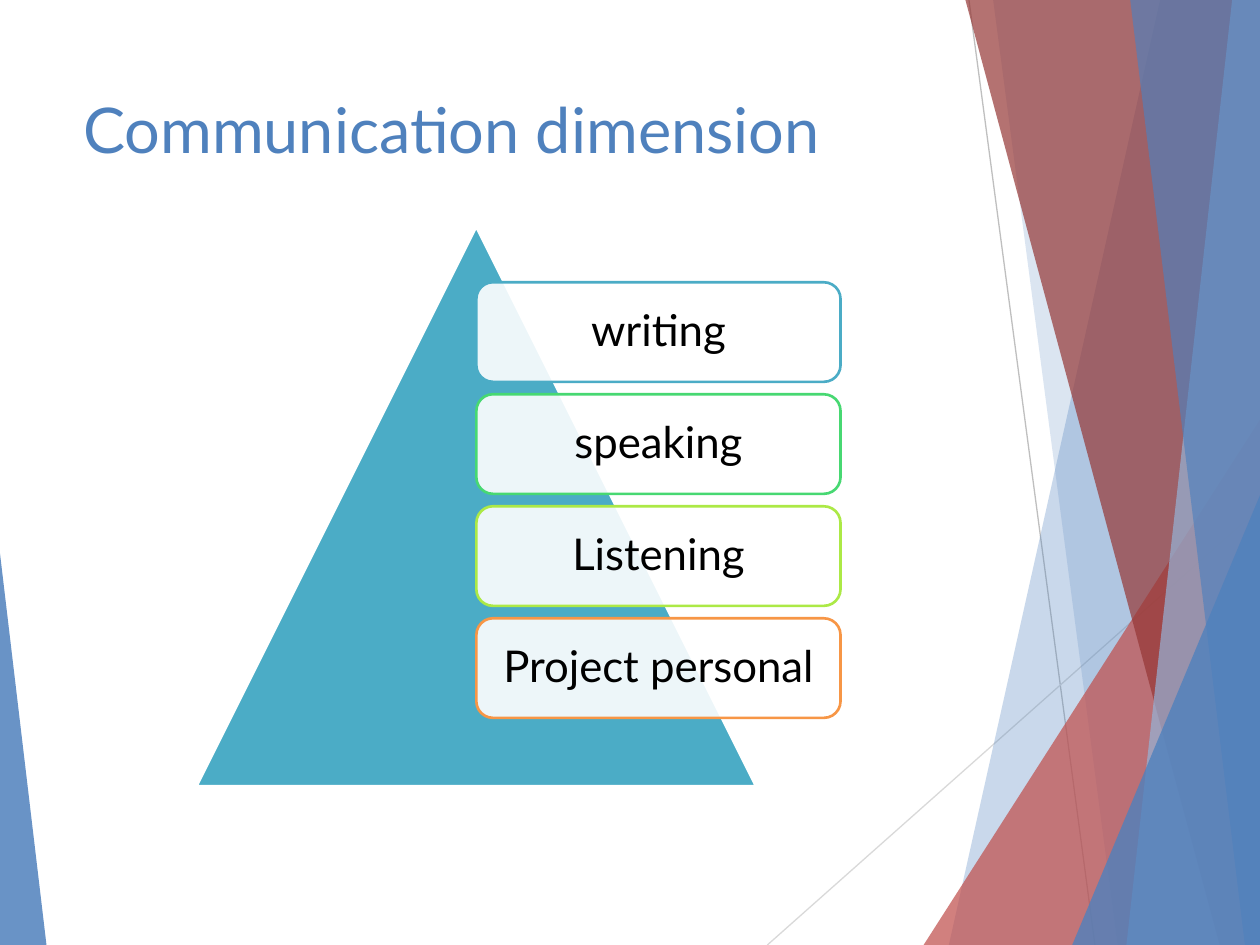
from dataclasses import dataclass

from lxml.etree import SubElement
from pptx import Presentation
from pptx.dml.color import RGBColor
from pptx.enum.shapes import MSO_CONNECTOR, MSO_SHAPE
from pptx.enum.text import MSO_ANCHOR, PP_ALIGN
from pptx.oxml.ns import qn
from pptx.util import Pt

WIDTH, HEIGHT = 720, 540


@dataclass(frozen=True)
class Theme:
    font: str = "Lato"
    title_size: int = 36
    card_size: int = 25
    outline: float = 1.5
    hairline: float = 0.75
    blue: str = "4F81BD"
    pale_blue: str = "95B3D7"
    red: str = "C0504D"
    dark_red: str = "953735"
    teal: str = "4BACC6"
    green: str = "47D872"
    lime: str = "ACE946"
    orange: str = "F79646"
    white: str = "FFFFFF"
    black: str = "000000"
    grey: str = "BFBFBF"
    light_grey: str = "D9D9D9"


class Painter:
    def __init__(self, page, theme):
        self.page = page
        self.theme = theme

    def paint(self, shape, color, opacity=100, outline=None):
        shape.shadow.inherit = False
        shape.fill.solid()
        shape.fill.fore_color.rgb = RGBColor.from_string(color)
        if opacity < 100:
            tint = shape._element.spPr.find(qn("a:solidFill"))[0]
            SubElement(tint, qn("a:alpha")).set("val", str(opacity * 1000))
        if outline:
            shape.line.color.rgb = RGBColor.from_string(outline)
            shape.line.width = Pt(self.theme.outline)
        else:
            shape.line.fill.background()

    def hairline(self, x1, y1, x2, y2, color):
        line = self.page.shapes.add_connector(
            MSO_CONNECTOR.STRAIGHT, Pt(x1), Pt(y1), Pt(x2), Pt(y2))
        line.line.color.rgb = RGBColor.from_string(color)
        line.line.width = Pt(self.theme.hairline)
        SubElement(line._element.spPr, qn("a:effectLst"))

    def band(self, top_x, bottom_x, color, opacity):
        """Fill from a slanted left edge to the right side of the page."""
        top = Pt(-0.72)
        builder = self.page.shapes.build_freeform(Pt(top_x), top)
        builder.add_line_segments([
            (Pt(WIDTH), top), (Pt(WIDTH), Pt(HEIGHT)), (Pt(bottom_x), Pt(HEIGHT))])
        self.paint(builder.convert_to_shape(), color, opacity)

    def triangle(self, left, top, width, height, color, opacity=100, apex=0.5, outline=None):
        shape = self.page.shapes.add_shape(
            MSO_SHAPE.ISOSCELES_TRIANGLE, Pt(left), Pt(top), Pt(width), Pt(height))
        shape.adjustments[0] = apex
        self.paint(shape, color, opacity, outline)

    def label(self, frame, text, size, color, align):
        frame.word_wrap = True
        para = frame.paragraphs[0]
        para.text = text
        para.alignment = align
        para.font.name = self.theme.font
        para.font.size = Pt(size)
        para.font.color.rgb = RGBColor.from_string(color)
        return para

    def title(self, text, left, top, width, height):
        box = self.page.shapes.title
        box.left, box.top, box.width, box.height = Pt(left), Pt(top), Pt(width), Pt(height)
        box.text_frame.vertical_anchor = MSO_ANCHOR.TOP
        self.label(box.text_frame, text, self.theme.title_size, self.theme.blue, PP_ALIGN.LEFT)

    def card(self, text, left, top, width, height, outline):
        box = self.page.shapes.add_shape(
            MSO_SHAPE.ROUNDED_RECTANGLE, Pt(left), Pt(top), Pt(width), Pt(height))
        self.paint(box, self.theme.white, 90, outline)
        frame = box.text_frame
        frame.vertical_anchor = MSO_ANCHOR.MIDDLE
        frame.margin_left = frame.margin_right = Pt(4.4)
        frame.margin_top = frame.margin_bottom = Pt(4.4)
        para = self.label(frame, text, self.theme.card_size, self.theme.black, PP_ALIGN.CENTER)
        para.line_spacing = 0.9


def main():
    deck = Presentation()
    deck.slide_width, deck.slide_height = Pt(WIDTH), Pt(HEIGHT)
    theme = Theme()
    painter = Painter(deck.slides.add_slide(deck.slide_layouts[5]), theme)

    # Background facets, back to front
    painter.hairline(553.7, 0, 625.7, HEIGHT, theme.grey)
    painter.hairline(WIDTH, 290.2, 438.5, HEIGHT, theme.light_grey)
    painter.band(663.1, 542.2, theme.blue, 30)
    painter.band(567.4, 638.6, theme.blue, 20)
    painter.triangle(527.8, 239.8, 192.2, 300.2, theme.red, 72, apex=1)
    painter.band(551.5, 697, theme.dark_red, 70)
    painter.band(704.2, 643.7, theme.pale_blue, 70)
    painter.band(645.8, 711.4, theme.blue, 65)
    painter.triangle(612.7, 283, 107.3, 257, theme.blue, 80, apex=1)
    painter.triangle(0, 316.1, 26.6, 223.9, theme.blue, 85, apex=0)

    # Title
    painter.title("Communication dimension", 40.3, 48.2, 507.6, 103.7)

    # Pyramid with its list of skills
    painter.triangle(112.3, 129.6, 319.7, 319.7, theme.teal, outline=theme.white)
    skills = [
        ("writing", theme.teal),
        ("speaking", theme.green),
        ("Listening", theme.lime),
        ("Project personal", theme.orange),
    ]
    for row, (skill, outline) in enumerate(skills):
        painter.card(skill, 272.2, 161.3 + 64 * row, 208.1, 56.9, outline)

    deck.save("out.pptx")


if __name__ == "__main__":
    main()
